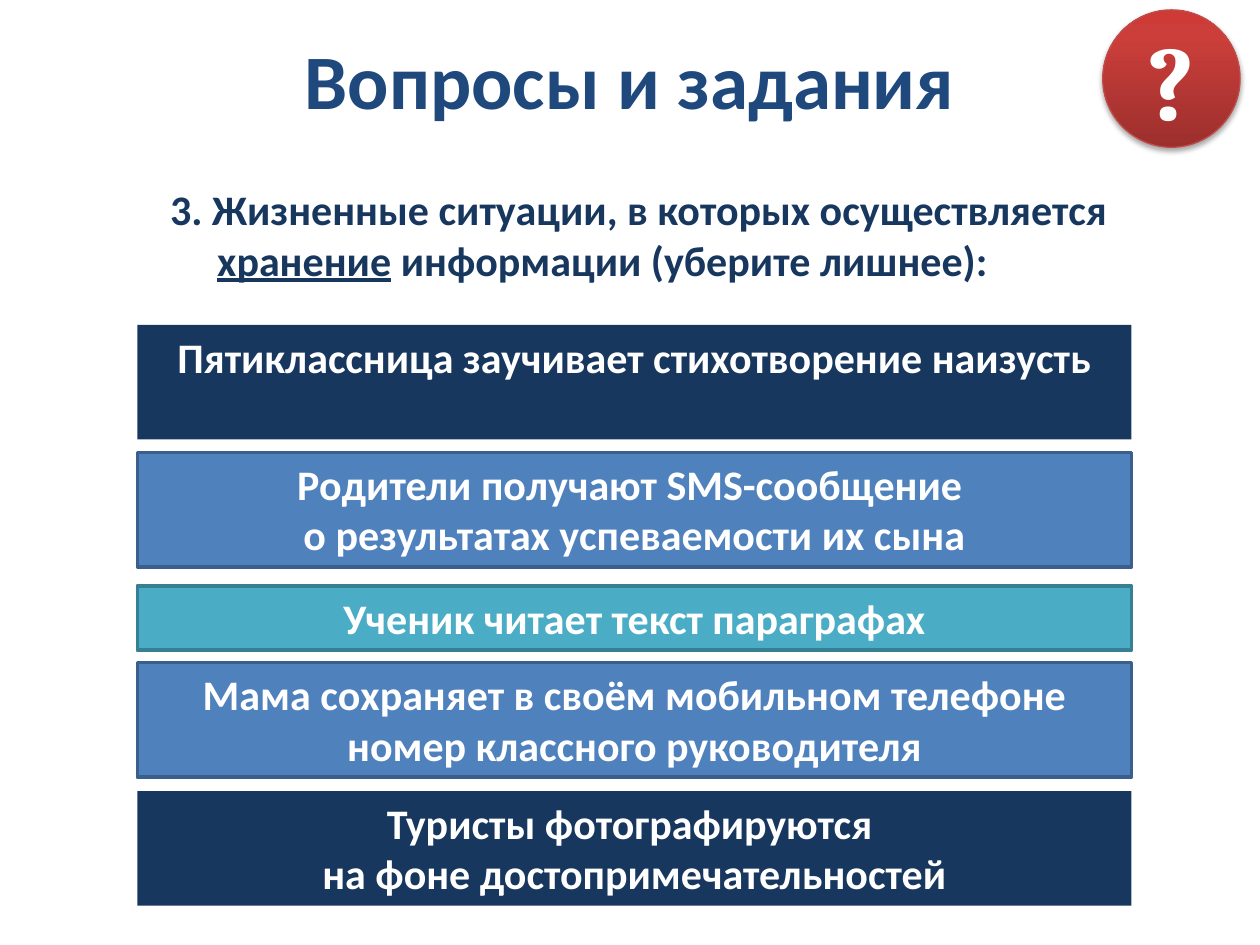
import copy
import pptx
import pptx.util
import pptx.dml.color
import pptx.enum.shapes
import pptx.enum.text
import pptx.oxml
import pptx.oxml.ns
from dataclasses import dataclass
from pptx.util import Cm, Pt

SHAPE = pptx.enum.shapes.MSO_SHAPE
ANCHOR = pptx.enum.text.MSO_ANCHOR
CENTER = pptx.enum.text.PP_ALIGN.CENTER
qn = pptx.oxml.ns.qn


@dataclass(frozen=True)
class Theme:
    font: str = "Calibri"
    badge_font: str = "Cambria"
    title: str = "1F497D"
    navy: str = "17375E"
    blue: str = "4F81BD"
    blue_edge: str = "3A5F8C"
    teal: str = "4BACC6"
    teal_edge: str = "377F92"
    white: str = "FFFFFF"
    badge_stops: tuple = ((0, "9C2F2D"), (0.8, "CB3E3A"), (1, "CE3B37"))
    badge_edge: str = "BF4C48"
    title_size: int = 44
    body_size: int = 24
    badge_size: int = 60


T = Theme()


def rgb(value):
    return pptx.dml.color.RGBColor.from_string(value)


def style(p, color, size=T.body_size, font=T.font):
    for r in p.runs:
        for name, value in dict(name=font, size=Pt(size), bold=True).items():
            setattr(r.font, name, value)
        r.font.color.rgb = rgb(color)


def add_text_box(s, box, anchor=ANCHOR.TOP):
    tf = s.shapes.add_textbox(*map(Cm, box)).text_frame
    tf.word_wrap = True
    tf.vertical_anchor = anchor
    return tf.paragraphs[0]


def add_title(s, box):
    p = add_text_box(s, box, ANCHOR.MIDDLE)
    p.text, p.alignment = "Вопросы и задания", CENTER
    style(p, T.title, T.title_size)


def add_question(s, box):
    p = add_text_box(s, box)
    pPr = p._p.get_or_add_pPr()
    pPr.set("marL", str(Cm(0.95)))
    pPr.set("indent", str(-Cm(0.95)))
    for text, underline in (
        ("3. Жизненные ситуации, в которых осуществляется ", False),
        ("хранение", True),
        (" информации (уберите лишнее):", False),
    ):
        r = p.add_run()
        r.text, r.font.underline = text, underline
    style(p, T.navy)


def add_badge(s, box):
    sp = s.shapes.add_shape(SHAPE.OVAL, *map(Cm, box))
    # Three-stop gradient, dark at the bottom
    sp.fill.gradient()
    sp.fill.gradient_angle = 90
    stops = sp._element.spPr.find(".//" + qn("a:gsLst"))
    stops.append(copy.deepcopy(stops[-1]))
    for stop, (position, color) in zip(sp.fill.gradient_stops, T.badge_stops):
        stop.position = position
        stop.color.rgb = rgb(color)
    sp.line.color.rgb = rgb(T.badge_edge)
    sp.line.width = Pt(0.75)
    # Soft shadow below the disc
    sp.shadow.inherit = False
    sp._element.spPr.find(qn("a:effectLst")).append(pptx.oxml.parse_xml(
        f'<a:outerShdw {pptx.oxml.ns.nsdecls("a")} blurRad="{Pt(3.1)}" '
        f'dist="{Pt(1.8)}" dir="5400000" rotWithShape="0">'
        '<a:srgbClr val="000000"><a:alpha val="35000"/></a:srgbClr>'
        '</a:outerShdw>'))
    tf = sp.text_frame
    tf.vertical_anchor = ANCHOR.MIDDLE
    p = tf.paragraphs[0]
    p.text, p.alignment = "?", CENTER
    style(p, T.white, T.badge_size, T.badge_font)


def add_answer(s, box, text, fill, edge):
    sp = s.shapes.add_shape(SHAPE.RECTANGLE, *map(Cm, box))
    sp.shadow.inherit = False
    sp.fill.solid()
    sp.fill.fore_color.rgb = rgb(fill)
    if edge:
        sp.line.color.rgb = rgb(edge)
        sp.line.width = Pt(2)
    else:
        sp.line.fill.background()
    tf = sp.text_frame
    tf.word_wrap = True
    tf.vertical_anchor = ANCHOR.TOP
    p = tf.paragraphs[0]
    p.text, p.alignment = text, CENTER
    style(p, T.white)


def add_answers(s, box):
    left, top, width, _ = box
    tall, low = 2.31, 1.3
    # Offset from the top of the list, height, text, fill, edge
    for offset, height, text, fill, edge in (
        (0, tall, "Пятиклассница заучивает стихотворение наизусть", T.navy, None),
        (2.57, tall, "Родители получают SMS-сообщение \v"
                     "о результатах успеваемости их сына", T.blue, T.blue_edge),
        (5.26, low, "Ученик читает текст параграфах", T.teal, T.teal_edge),
        (6.81, tall, "Мама сохраняет в своём мобильном телефоне "
                     "номер классного руководителя", T.blue, T.blue_edge),
        (9.4, tall, "Туристы фотографируются \v"
                    "на фоне достопримечательностей", T.navy, None),
    ):
        add_answer(s, (left, top + offset, width, height), text, fill, edge)


def main():
    prs = pptx.Presentation()
    prs.slide_width, prs.slide_height = Cm(25.4), Cm(19.05)
    s = prs.slides.add_slide(prs.slide_layouts[6])
    add_question(s, (3.18, 3.58, 21.28, 2.18))
    add_title(s, (1.27, 0, 22.86, 3.18))
    add_badge(s, (22.23, 0.2, 2.77, 2.77))
    add_answers(s, (2.77, 6.55, 20.04, 11.71))
    prs.save("out.pptx")


if __name__ == "__main__":
    main()
